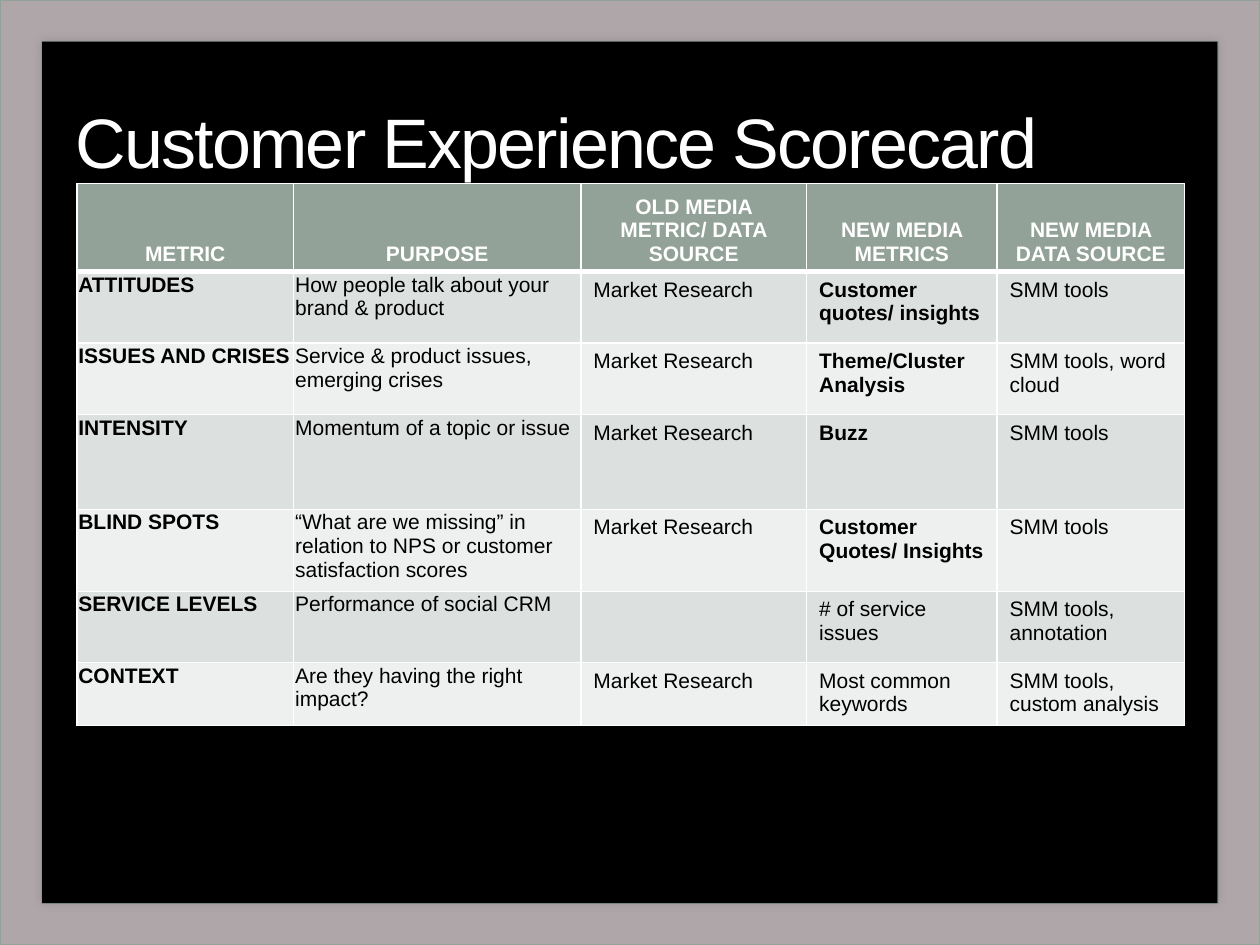
"""Build the Customer Experience Scorecard slide."""
from lxml.etree import SubElement
from pptx import Presentation
from pptx.dml.color import RGBColor
from pptx.enum.shapes import MSO_SHAPE
from pptx.enum.text import MSO_ANCHOR, PP_ALIGN
from pptx.oxml.ns import qn
from pptx.util import Cm, Pt

TITLE = "Customer Experience Scorecard"
HEADS = ["METRIC", "PURPOSE", "OLD MEDIA METRIC/ DATA SOURCE",
         "NEW MEDIA METRICS", "NEW MEDIA DATA SOURCE"]
OLD = "Market Research"
ROWS = [
    ["ATTITUDES", "How people talk about your brand & product", OLD,
     "Customer quotes/ insights", "SMM tools"],
    ["ISSUES AND CRISES", "Service & product issues, emerging crises", OLD,
     "Theme/Cluster Analysis", "SMM tools, word cloud"],
    ["INTENSITY", "Momentum of a topic or issue", OLD, "Buzz", "SMM tools"],
    ["BLIND SPOTS",
     "“What are we missing” in relation to NPS or customer satisfaction scores",
     OLD, "Customer Quotes/ Insights", "SMM tools"],
    ["SERVICE LEVELS", "Performance of social CRM", "",
     "# of service issues", "SMM tools, annotation"],
    ["CONTEXT", "Are they having the right impact?", OLD,
     "Most common keywords", "SMM tools, custom analysis"],
]
WIDTHS = [4.37, 5.79, 4.55, 3.84, 3.78]
HEIGHTS = [1.17, 1.44, 1.44, 1.91, 1.65, 1.44, 1.17]
BOLD_ROWS = 4
COLORS = {"frame": "AFA6AA", "head": "93A299", "panel": "000000",
          "odd": "DCE0DE", "even": "EEF0EF", "light": "FFFFFF",
          "dark": "000000", "shade": "595959"}


def rgb(name):
    return RGBColor.from_string(COLORS[name])


def style(run, size, color, bold=False):
    font = run.font
    font.name, font.size, font.bold = "Arial", Pt(size), bold
    font.color.rgb = rgb(color)


def add_block(slide, kind, box, color):
    block = slide.shapes.add_shape(kind, *map(Cm, box))
    block.shadow.inherit = False
    block.fill.solid()
    block.fill.fore_color.rgb = rgb(color)
    block.line.fill.background()
    return block


def add_color(parent, name):
    fill = SubElement(parent, qn("a:solidFill"))
    return SubElement(fill, qn("a:srgbClr"), val=COLORS[name])


def add_glow(shape):
    effects = shape._element.spPr.find(qn("a:effectLst"))
    glow = SubElement(effects, qn("a:outerShdw"), blurRad=str(Pt(5)),
                      dist="0", dir="0", algn="ctr", rotWithShape="0")
    shade = SubElement(glow, qn("a:srgbClr"), val=COLORS["shade"])
    SubElement(shade, qn("a:alpha"), val="25000")


def add_frame(slide):
    frame = add_block(slide, MSO_SHAPE.FRAME, (0, 0, 25.4, 19.05), "frame")
    frame.adjustments[0] = 0.044
    frame.line.color.rgb = rgb("head")
    frame.line.width = Pt(0.75)
    panel = add_block(slide, MSO_SHAPE.RECTANGLE,
                      (0.85, 0.84, 23.7, 17.37), "panel")
    add_glow(panel)


def add_title(slide):
    box = slide.shapes.add_textbox(Cm(1.27), Cm(1.47), Cm(22.86), Cm(2.74))
    frame = box.text_frame
    frame.word_wrap = True
    frame.vertical_anchor = MSO_ANCHOR.MIDDLE
    frame.text = TITLE
    run = frame.paragraphs[0].runs[0]
    style(run, 40, "light")
    run._r.get_or_add_rPr().set("spc", "-100")


def set_cell(cell, text, row, col):
    head = row == 0
    props = cell._tc.get_or_add_tcPr()
    for side in "LRTB":
        thick = (head and side == "B") or (row == 1 and side == "T")
        edge = SubElement(props, qn("a:ln" + side), w=str(Pt(3 if thick else 1)))
        add_color(edge, "light")
    cell.fill.solid()
    cell.fill.fore_color.rgb = rgb("head" if head else "odd" if row % 2 else "even")
    cell.vertical_anchor = MSO_ANCHOR.BOTTOM if head else MSO_ANCHOR.TOP
    if not head and col < 2:
        cell.margin_left = cell.margin_right = cell.margin_top = Cm(0.03)
        cell.margin_bottom = 0
    cell.text = text
    para = cell.text_frame.paragraphs[0]
    if head:
        para.alignment = PP_ALIGN.CENTER
    bold = head or col == 0 or (col == 3 and row <= BOLD_ROWS)
    for run in para.runs:
        style(run, 12, "light" if head else "dark", bold)


def add_grid(slide):
    data = [HEADS] + ROWS
    grid = slide.shapes.add_table(len(data), len(HEADS), Cm(1.55), Cm(3.7),
                                  Cm(sum(WIDTHS)), Cm(sum(HEIGHTS))).table
    for column, width in zip(grid.columns, WIDTHS):
        column.width = Cm(width)
    for line, height in zip(grid.rows, HEIGHTS):
        line.height = Cm(height)
    for row, texts in enumerate(data):
        for col, text in enumerate(texts):
            set_cell(grid.cell(row, col), text, row, col)


def main():
    deck = Presentation()
    deck.slide_width, deck.slide_height = Cm(25.4), Cm(19.05)
    slide = deck.slides.add_slide(deck.slide_layouts[6])
    add_frame(slide)
    add_title(slide)
    add_grid(slide)
    deck.save("out.pptx")


if __name__ == "__main__":
    main()
